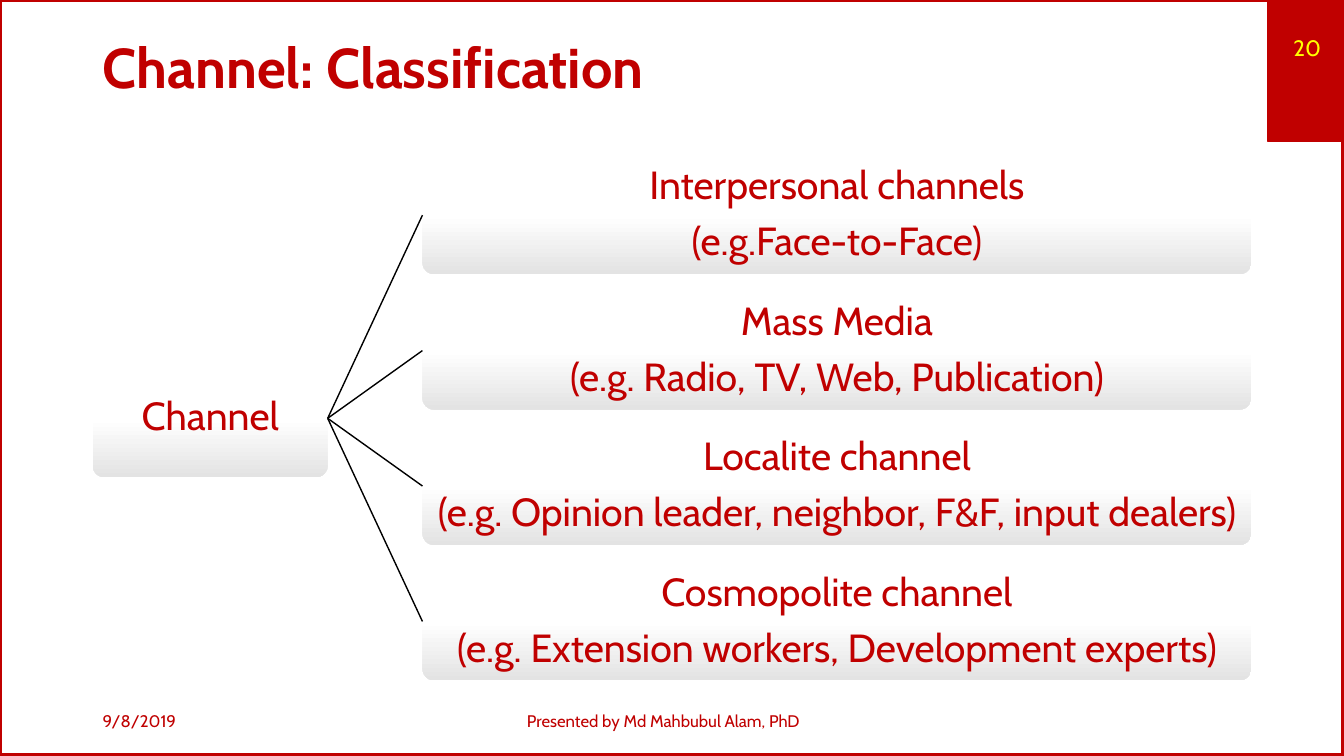
from dataclasses import dataclass

from lxml.etree import SubElement
from pptx import Presentation
from pptx.dml.color import RGBColor
from pptx.enum.shapes import MSO_CONNECTOR as Connector, MSO_SHAPE as Shape
from pptx.enum.text import MSO_ANCHOR as Anchor, PP_ALIGN as Align
from pptx.oxml.ns import qn
from pptx.util import Inches, Pt


@dataclass(frozen=True)
class Theme:
    """Colours, font and type sizes of the deck."""
    accent: RGBColor = RGBColor(0xC0, 0x00, 0x00)
    page_number: RGBColor = RGBColor(0xFF, 0xFF, 0x00)
    link: RGBColor = RGBColor(0x00, 0x00, 0x00)
    card_top: RGBColor = RGBColor(0xFF, 0xFF, 0xFF)
    card_bottom: RGBColor = RGBColor(0xE3, 0xE3, 0xE3)
    font: str = "Cabin"
    title: int = 40
    body: int = 28
    number: int = 16
    footer: int = 12


THEME = Theme()
CHANNELS = [
    ("Interpersonal channels", "(e.g.Face-to-Face)"),
    ("Mass Media", "(e.g. Radio, TV, Web, Publication)"),
    ("Localite channel", "(e.g. Opinion leader, neighbor, F&F, input dealers)"),
    ("Cosmopolite channel", "(e.g. Extension workers, Development experts)"),
]


def inches(box):
    """Convert left, top, width and height to lengths."""
    return [Inches(side) for side in box]


def write(frame, lines, size, color=THEME.accent, align=Align.LEFT,
          bold=False, spacing=1.0, after=0):
    """Fill a text frame with one paragraph per line."""
    frame.word_wrap = True
    frame.vertical_anchor = Anchor.MIDDLE
    for index, line in enumerate(lines):
        paragraph = frame.add_paragraph() if index else frame.paragraphs[0]
        paragraph.alignment = align
        paragraph.line_spacing = spacing
        paragraph.space_after = Pt(after)
        run = paragraph.add_run()
        run.text = line
        run.font.name = THEME.font
        run.font.size = Pt(size)
        run.font.bold = bold
        run.font.color.rgb = color


def add_label(slide, box, text, size, **style):
    """Add a one-line text box."""
    label = slide.shapes.add_textbox(*inches(box))
    write(label.text_frame, [text], size, **style)


def add_frame(slide, box):
    """Draw the page border and the number tab in its top right corner."""
    left, top, width, height = box
    tab_width = 0.76
    tab = slide.shapes.add_shape(
        Shape.RECTANGLE, *inches((left + width - tab_width, top, tab_width, 1.4)))
    tab.fill.solid()
    tab.fill.fore_color.rgb = THEME.accent
    border = slide.shapes.add_shape(Shape.RECTANGLE, *inches(box))
    border.fill.background()
    for part, weight in ((tab, 1), (border, 3.5)):
        part.shadow.inherit = False
        part.line.color.rgb = THEME.accent
        part.line.width = Pt(weight)
    add_label(slide, (left + width - tab_width + 0.01, top + 0.24, 0.62, 0.46), "20",
              THEME.number, color=THEME.page_number, align=Align.RIGHT)


def add_card(slide, box, lines):
    """Add a rounded card that shades to grey in its lower half."""
    card = slide.shapes.add_shape(Shape.ROUNDED_RECTANGLE, *inches(box))
    card.adjustments[0] = 0.1
    card.shadow.inherit = False
    card.line.fill.background()
    card.fill.gradient()
    card.fill.gradient_angle = 270
    shades = ((0.5, THEME.card_top), (1.0, THEME.card_bottom))
    for stop, (position, color) in zip(card.fill.gradient_stops, shades):
        stop.position = position
        stop.color.rgb = color
    frame = card.text_frame
    frame.margin_left = frame.margin_right = Inches(0.02)
    frame.margin_top = frame.margin_bottom = Inches(0.02)
    write(frame, lines, THEME.body, align=Align.CENTER,
          spacing=0.9, after=0.35 * THEME.body)
    return card


def add_link(slide, parent, child):
    """Join the right side of one card to the left side of another."""
    link = slide.shapes.add_connector(Connector.STRAIGHT, 0, 0, 0, 0)
    link.begin_connect(parent, 3)
    link.end_connect(child, 1)
    link.line.color.rgb = THEME.link
    link.line.width = Pt(1)
    SubElement(link._element.spPr, qn("a:effectLst"))


def add_channel_tree(slide, box):
    """Place the root card at the left and its channels evenly at the right."""
    left, top, width, height = box
    card_height, root_width, branch_width = 1.17, 2.33, 8.22
    root_top = top + (height - card_height) / 2
    root = add_card(slide, (left, root_top, root_width, card_height), ["Channel"])
    pitch = (height - card_height) / (len(CHANNELS) - 1)
    for row, lines in enumerate(CHANNELS):
        branch_box = (left + width - branch_width, top + row * pitch,
                      branch_width, card_height)
        add_link(slide, root, add_card(slide, branch_box, lines))


def add_footer(slide, box):
    """Place the date at the left and the presenter in the middle."""
    left, top, width, height = box
    presenter_width = 4.32
    add_label(slide, (left, top, 3, height), "9/8/2019", THEME.footer)
    add_label(slide, (left + (width - presenter_width) / 2, top, presenter_width, height),
              "Presented by Md Mahbubul Alam, PhD", THEME.footer, align=Align.CENTER)


def main():
    """Build the slide and save it."""
    deck = Presentation()
    deck.slide_width, deck.slide_height = Inches(13.33), Inches(7.5)
    slide = deck.slides.add_slide(deck.slide_layouts[6])
    add_frame(slide, (0, 0, 13.33, 7.5))
    add_label(slide, (0.92, 0.28, 11.5, 0.83), "Channel: Classification",
              THEME.title, bold=True, spacing=0.9)
    add_channel_tree(slide, (0.92, 1.55, 11.49, 5.2))
    add_footer(slide, (0.92, 6.95, 11.32, 0.4))
    deck.save("out.pptx")


if __name__ == "__main__":
    main()
